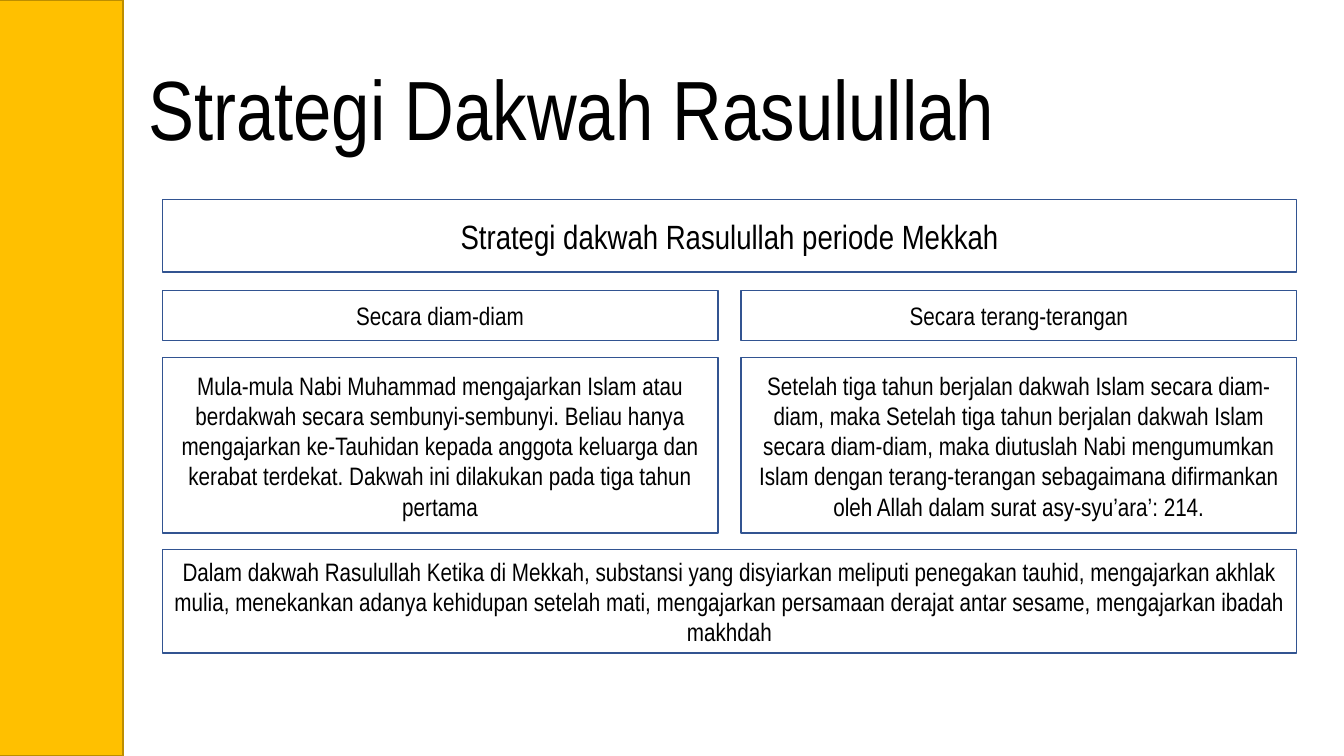
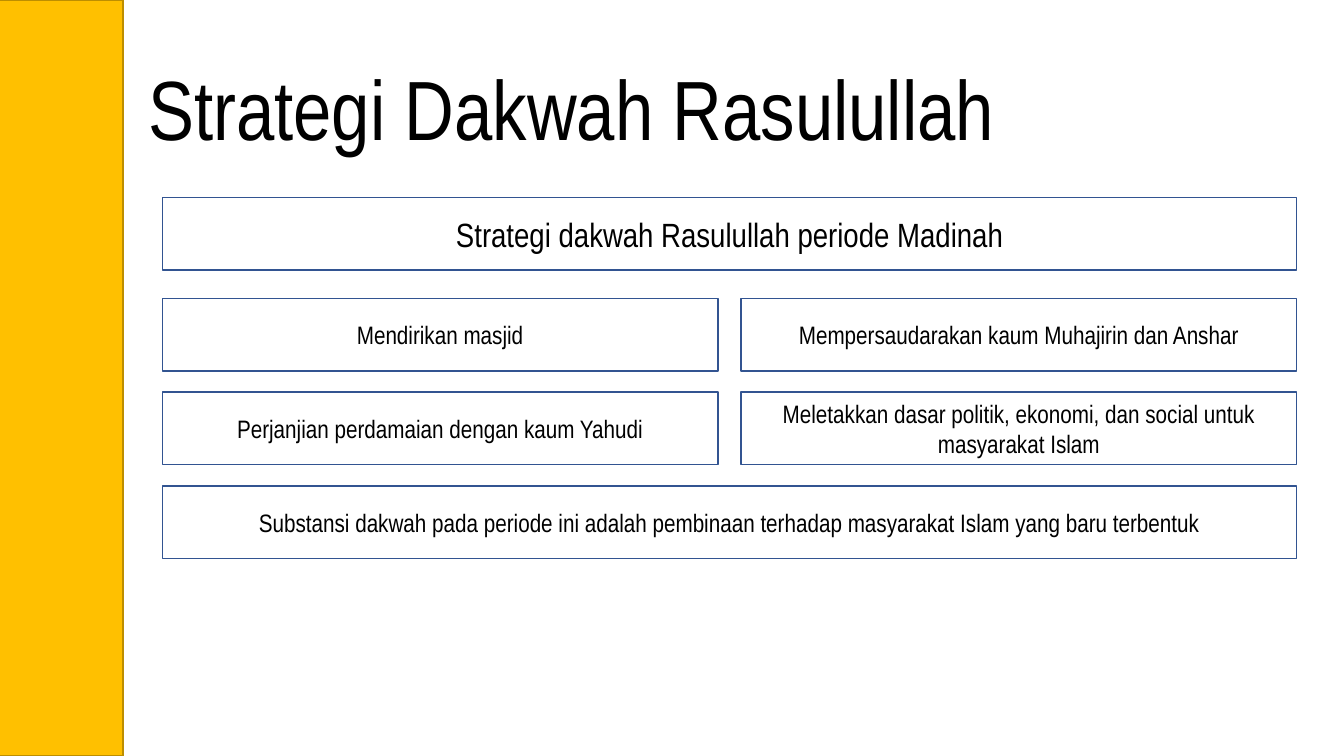
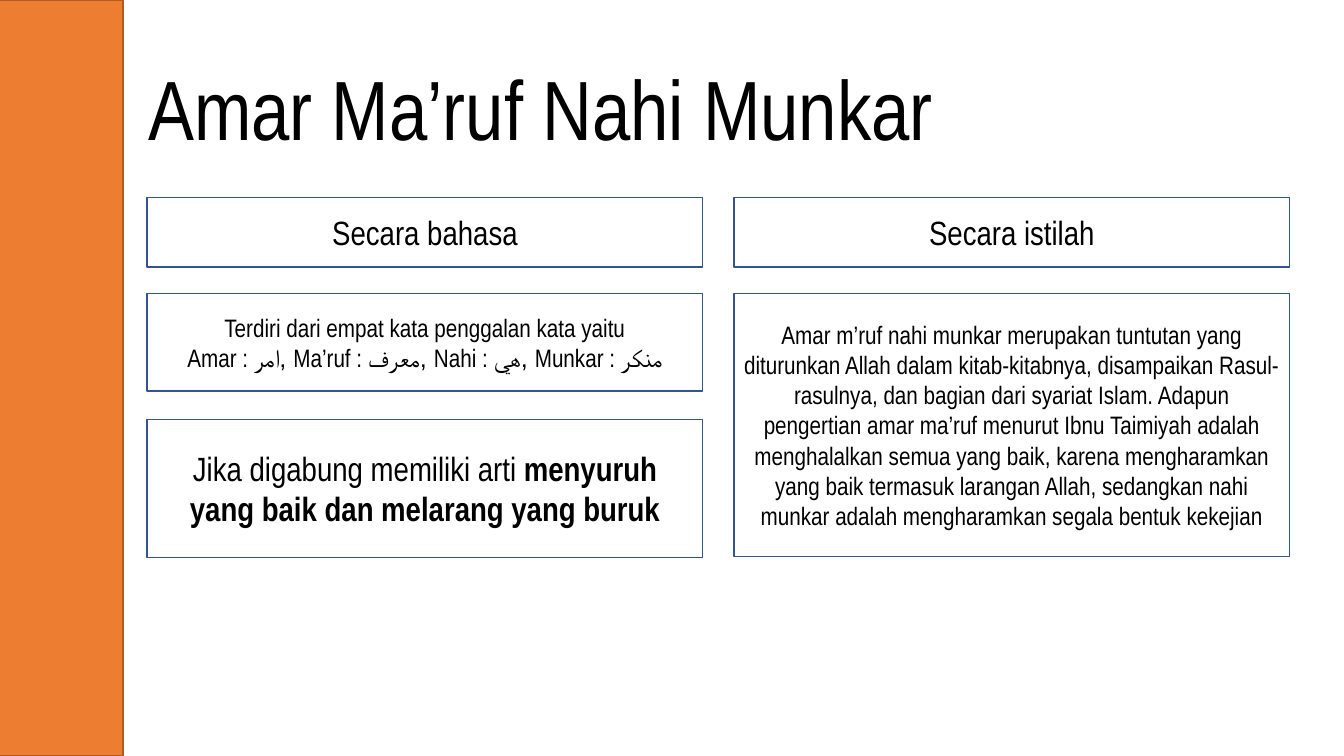
from pptx import Presentation
from pptx.dml.color import RGBColor
from pptx.enum.shapes import MSO_SHAPE as Shape
from pptx.enum.text import MSO_ANCHOR as Anchor, PP_ALIGN as Align
from pptx.util import Inches, Pt

BLACK, WHITE, BLUE = "000000", "FFFFFF", "325491"
YELLOW, YELLOW_EDGE = "FFC000", "BD8E00"
ORANGE, ORANGE_EDGE = "ED7D31", "AF5C24"
NARROW, ARABIC, BOLD = "Arial Narrow", "Arial", "bold"
COLUMN_WIDTH = 5.51
HEADING, BODY = 24, 18


def add_rect(page, left, top, width, height, fill, edge):
    box = page.shapes.add_shape(Shape.RECTANGLE, Inches(left), Inches(top),
                                Inches(width), Inches(height))
    box.shadow.inherit = False
    box.fill.solid()
    box.fill.fore_color.rgb = RGBColor.from_string(fill)
    box.line.color.rgb = RGBColor.from_string(edge)
    box.line.width = Pt(1)
    return box


def add_span(para, text, size, style=NARROW):
    """Add one run; style is a font name, or BOLD for the bold narrow font."""
    span = para.add_run()
    span.text = text
    span.font.size = Pt(size)
    span.font.name = NARROW if style == BOLD else style
    span.font.bold = style == BOLD
    span.font.color.rgb = RGBColor.from_string(BLACK)


# Each row: top, height, text size, cells. One cell spans both columns unless
# it is followed by None; a cell is a string or a list of paragraphs of spans.
mecca_rows = [
    (1.98, 0.72, HEADING, ["Strategi dakwah Rasulullah periode Mekkah"]),
    (2.88, 0.5, BODY, ["Secara diam-diam", "Secara terang-terangan"]),
    (3.55, 1.74, BODY, [
        "Mula-mula Nabi Muhammad mengajarkan Islam atau berdakwah secara "
        "sembunyi-sembunyi. Beliau hanya mengajarkan ke-Tauhidan kepada anggota "
        "keluarga dan kerabat terdekat. Dakwah ini dilakukan pada tiga tahun pertama",
        "Setelah tiga tahun berjalan dakwah Islam secara diam-diam, maka Setelah "
        "tiga tahun berjalan dakwah Islam secara diam-diam, maka diutuslah Nabi "
        "mengumumkan Islam dengan terang-terangan sebagaimana difirmankan oleh "
        "Allah dalam surat asy-syu’ara’: 214."]),
    (5.45, 1.03, BODY, [
        "Dalam dakwah Rasulullah Ketika di Mekkah, substansi yang disyiarkan "
        "meliputi penegakan tauhid, mengajarkan akhlak mulia, menekankan adanya "
        "kehidupan setelah mati, mengajarkan persamaan derajat antar sesame, "
        "mengajarkan ibadah makhdah"]),
]
medina_rows = [
    (1.96, 0.72, HEADING, ["Strategi dakwah Rasulullah periode Madinah"]),
    (2.96, 0.72, BODY, ["Mendirikan masjid",
                        "Mempersaudarakan kaum Muhajirin dan Anshar"]),
    (3.89, 0.72, BODY, ["Perjanjian perdamaian dengan kaum Yahudi",
                        "Meletakkan dasar politik, ekonomi, dan social untuk "
                        "masyarakat Islam"]),
    (4.82, 0.72, BODY, ["Substansi dakwah pada periode ini adalah pembinaan "
                        "terhadap masyarakat Islam yang baru terbentuk"]),
]
meaning_rows = [
    (1.96, 0.69, HEADING, ["Secara bahasa", "Secara istilah"]),
    (2.91, 0.97, BODY, [[
        [("Terdiri dari empat kata penggalan kata yaitu", NARROW)],
        [("Amar : ", NARROW), ("امر, ", ARABIC),
         ("Ma’ruf : ", NARROW), ("معرف, ", ARABIC),
         ("Nahi : ", NARROW), ("هي, ", ARABIC),
         ("Munkar : ", NARROW), ("منكر", ARABIC)]], None]),
    (4.16, 1.37, HEADING, [[
        [("Jika digabung memiliki arti ", NARROW),
         ("menyuruh yang baik dan melarang yang buruk", BOLD)]], None]),
    (2.91, 2.61, BODY, [
        None,
        "Amar m’ruf nahi munkar merupakan tuntutan yang diturunkan Allah dalam "
        "kitab-kitabnya, disampaikan Rasul-rasulnya, dan bagian dari syariat "
        "Islam. Adapun pengertian amar ma’ruf menurut Ibnu Taimiyah adalah "
        "menghalalkan semua yang baik, karena mengharamkan yang baik termasuk "
        "larangan Allah, sedangkan nahi munkar adalah mengharamkan segala bentuk "
        "kekejian"]),
]

# Title, band fill and edge, left of the grid, gap between columns, rows
pages = [
    ("Strategi Dakwah Rasulullah", YELLOW, YELLOW_EDGE, 1.61, 0.23, mecca_rows),
    ("Strategi Dakwah Rasulullah", YELLOW, YELLOW_EDGE, 1.61, 0.23, medina_rows),
    ("Amar Ma’ruf Nahi Munkar", ORANGE, ORANGE_EDGE, 1.46, 0.31, meaning_rows),
]

deck = Presentation()
deck.slide_width, deck.slide_height = Inches(13.33), Inches(7.5)
title_only = deck.slide_layouts[5]

for title_text, band_fill, band_edge, grid_left, gap, rows in pages:
    page = deck.slides.add_slide(title_only)
    add_rect(page, -0.07, 0, 1.29, 7.5, band_fill, band_edge)

    title = page.shapes.title
    title.left, title.top = Inches(1.37), Inches(0.4)
    title.width, title.height = Inches(11.05), Inches(1.45)
    title.text_frame.vertical_anchor = Anchor.MIDDLE
    para = title.text_frame.paragraphs[0]
    para.alignment = Align.LEFT
    para.line_spacing = 0.9
    add_span(para, title_text, 60)

    for top, height, size, cells in rows:
        width = COLUMN_WIDTH if len(cells) == 2 else 2 * COLUMN_WIDTH + gap
        for column, cell in enumerate(cells):
            if cell is None:
                continue
            left = grid_left + column * (COLUMN_WIDTH + gap)
            box = add_rect(page, left, top, width, height, WHITE, BLUE)
            frame = box.text_frame
            frame.word_wrap = True
            frame.vertical_anchor = Anchor.MIDDLE
            paragraphs = [[(cell, NARROW)]] if isinstance(cell, str) else cell
            for index, spans in enumerate(paragraphs):
                para = frame.add_paragraph() if index else frame.paragraphs[0]
                para.alignment = Align.CENTER
                for text, style in spans:
                    add_span(para, text, size, style)

deck.save("out.pptx")
